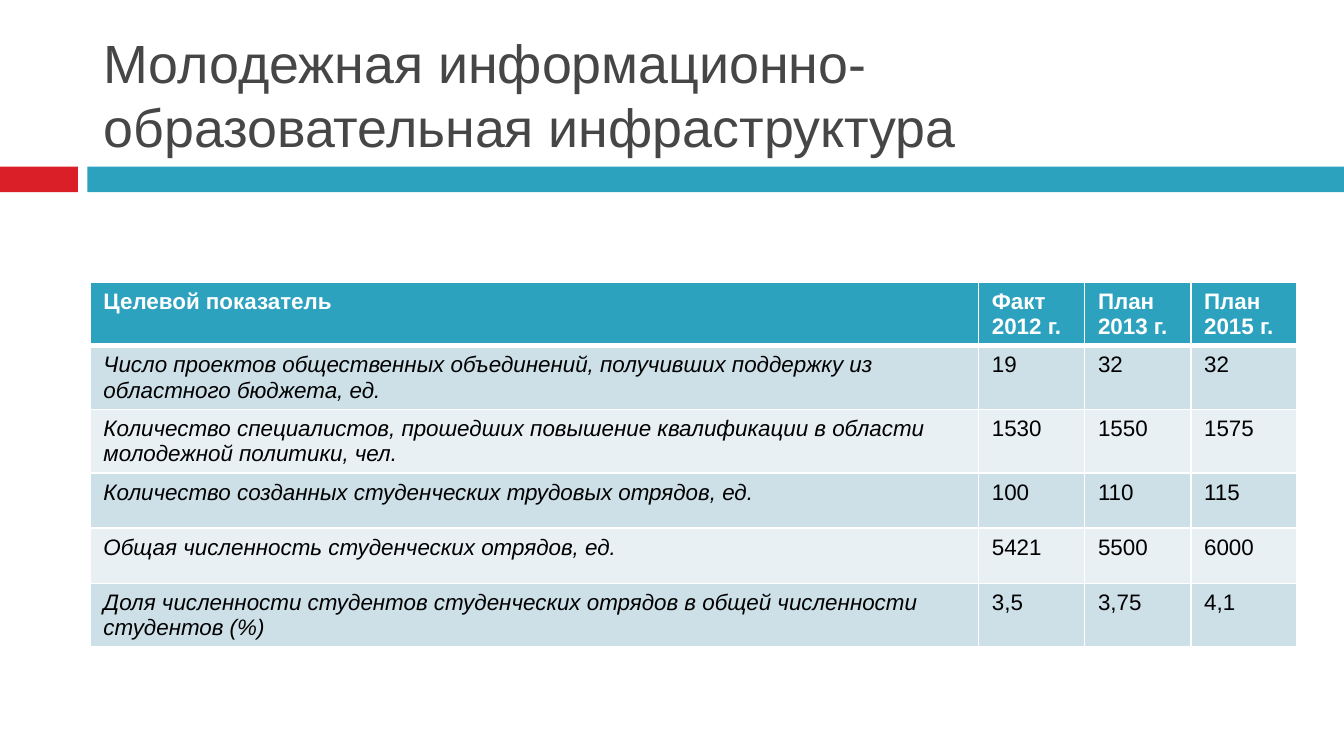
from dataclasses import dataclass

from lxml import etree
from pptx import Presentation
from pptx.dml.color import RGBColor
from pptx.enum.shapes import MSO_SHAPE as Shape
from pptx.enum.text import MSO_ANCHOR as Anchor, MSO_AUTO_SIZE as AutoSize, PP_ALIGN as Align
from pptx.oxml.ns import qn
from pptx.util import Inches, Pt


@dataclass(frozen=True)
class Theme:
    font: str = "Arial"
    title_size: float = 28.8
    table_size: float = 12
    red: str = "DA1F28"
    teal: str = "2DA2BF"
    gray: str = "464646"
    black: str = "000000"
    white: str = "FFFFFF"
    bands: tuple = ("CDE0E8", "E8F0F4")


THEME = Theme()

TITLE = "Молодежная информационно-образовательная инфраструктура"
HEADER = ("Целевой показатель", "Факт 2012 г.", "План 2013 г.", "План 2015 г.")
INDICATORS = (
    ("Число проектов общественных объединений, получивших поддержку из областного бюджета, ед.",
     "19", "32", "32"),
    ("Количество специалистов, прошедших повышение квалификации в области молодежной политики, чел.",
     "1530", "1550", "1575"),
    ("Количество созданных студенческих трудовых отрядов, ед.", "100", "110", "115"),
    ("Общая численность студенческих отрядов, ед.", "5421", "5500", "6000"),
    ("Доля численности студентов студенческих отрядов в общей численности студентов (%)",
     "3,5", "3,75", "4,1"),
)
COLUMN_WIDTHS = (6.61, 0.79, 0.79, 0.79)
ROW_HEIGHT = 0.41


def write_text(frame, text, *, size, color, bold=False, italic=False):
    para = frame.paragraphs[0]
    para.alignment = Align.LEFT
    span = para.add_run()
    span.text = text
    font = span.font
    font.name, font.size = THEME.font, Pt(size)
    font.bold, font.italic = bold, italic
    font.color.rgb = RGBColor.from_string(color)


def add_bar(slide, left, width, color):
    bar = slide.shapes.add_shape(
        Shape.RECTANGLE, Inches(left), Inches(1.24), Inches(width), Inches(0.19))
    bar.shadow.inherit = False
    bar.fill.solid()
    bar.fill.fore_color.rgb = RGBColor.from_string(color)
    bar.line.fill.background()


def add_title(slide, text):
    title = slide.shapes.title
    title.left, title.top = Inches(0.67), Inches(0.13)
    title.width, title.height = Inches(8.92), Inches(1.1)
    frame = title.text_frame
    frame.word_wrap = True
    frame.auto_size = AutoSize.NONE
    frame.vertical_anchor = Anchor.BOTTOM
    write_text(frame, text, size=THEME.title_size, color=THEME.gray)


def set_borders(cell, top, bottom):
    properties = cell._tc.get_or_add_tcPr()
    widths = {"a:lnL": 1, "a:lnR": 1, "a:lnT": top, "a:lnB": bottom}
    # Border lines must come before the cell fill
    for position, (tag, width) in enumerate(widths.items()):
        line = etree.Element(qn(tag), w=str(Pt(width)))
        fill = etree.SubElement(line, qn("a:solidFill"))
        etree.SubElement(fill, qn("a:srgbClr"), val=THEME.white)
        properties.insert(position, line)


def fill_cell(cell, text, *, fill, top=1, bottom=1, **text_format):
    cell.fill.solid()
    cell.fill.fore_color.rgb = RGBColor.from_string(fill)
    set_borders(cell, top, bottom)
    write_text(cell.text_frame, text, size=THEME.table_size, **text_format)


def add_indicator_table(slide):
    row_count = len(INDICATORS) + 1
    table = slide.shapes.add_table(
        row_count, len(HEADER), Inches(0.67), Inches(2.1),
        Inches(sum(COLUMN_WIDTHS)), Inches(ROW_HEIGHT * row_count)).table
    for column, width in zip(table.columns, COLUMN_WIDTHS):
        column.width = Inches(width)

    # Header row with a thicker rule below
    for index, text in enumerate(HEADER):
        fill_cell(table.cell(0, index), text, fill=THEME.teal, bottom=3,
                  color=THEME.white, bold=True)

    # Banded rows: italic indicator, upright values
    for row, values in enumerate(INDICATORS, start=1):
        band = THEME.bands[(row - 1) % 2]
        # The first row shares its top edge with the header rule
        top = 3 if row == 1 else 1
        for index, text in enumerate(values):
            fill_cell(table.cell(row, index), text, fill=band, top=top,
                      color=THEME.black, italic=index == 0)


def main():
    # Widescreen 16:9 page
    deck = Presentation()
    deck.slide_width = Inches(10)
    deck.slide_height = Inches(10 * 9 / 16)
    slide = deck.slides.add_slide(deck.slide_layouts[5])

    # Divider bars under the title
    add_bar(slide, 0, 0.58, THEME.red)
    add_bar(slide, 0.65, 9.35, THEME.teal)

    # Content
    add_title(slide, TITLE)
    add_indicator_table(slide)
    deck.save("out.pptx")


if __name__ == "__main__":
    main()
